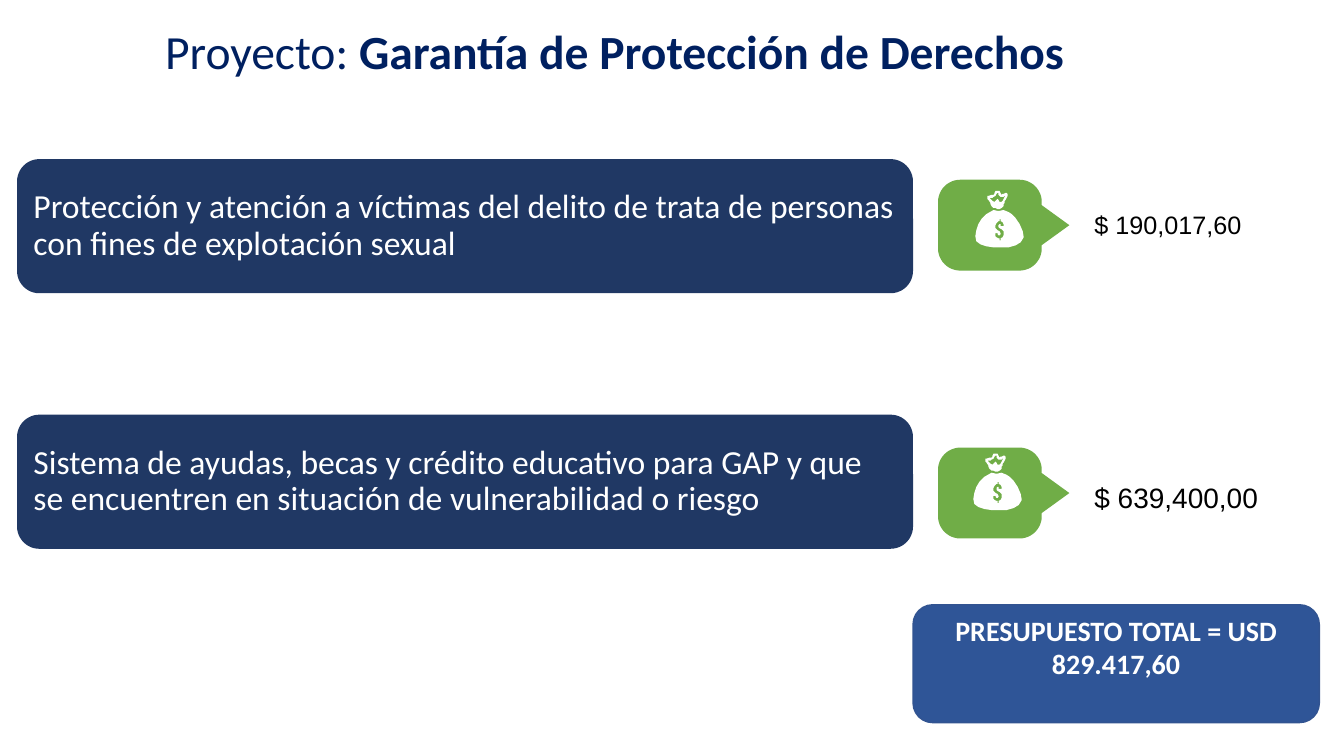
import math

from pptx import Presentation
from pptx.dml.color import RGBColor
from pptx.enum.shapes import MSO_SHAPE
from pptx.enum.text import MSO_ANCHOR, MSO_AUTO_SIZE, PP_ALIGN
from pptx.util import Cm, Pt

ROUNDED = MSO_SHAPE.ROUNDED_RECTANGLE
TOP, MIDDLE = MSO_ANCHOR.TOP, MSO_ANCHOR.MIDDLE
LEFT, CENTER = PP_ALIGN.LEFT, PP_ALIGN.CENTER
COLORS = {
    "title": "002060", "panel": "203864", "callout": "70AD47",
    "total": "2F5597", "total_line": "325491", "white": "FFFFFF", "black": "000000",
}

# Money bag outlines on a grid 48 units wide
BAG_WIDTH = 48
DOLLAR = [
    (24, 28), (24, 30), (23, 30), (22, 31), (21, 32), (20, 34), (20, 37), (21, 38),
    (22, 39), (24, 40), (25, 42), (25, 43), (24, 44), (23, 44), (22, 43), (22, 42),
    (20, 42), (20, 45), (21, 46), (23, 47), (24, 47), (24, 49), (25, 49), (25, 47),
    (27, 46), (28, 44), (28, 40), (27, 39), (26, 38), (24, 37), (23, 36), (23, 34),
    (24, 33), (25, 33), (25, 35), (28, 35), (28, 33), (27, 31), (25, 30), (25, 28),
]
SACK = [
    (28, 19), (33, 21), (36, 23), (40, 27), (44, 33), (47, 40), (48, 46), (45, 51),
    (40, 54), (33, 56), (25, 56), (18, 56), (11, 55), (5, 53), (1, 50), (0, 45),
    (1, 39), (3, 33), (6, 28), (11, 23), (18, 19), (23, 20),
]
KNOT_HOLE = [
    (22, 2), (21, 3), (20, 5), (18, 6), (17, 7), (14, 7), (15, 8), (16, 9), (17, 10),
    (19, 11), (20, 10), (21, 9), (22, 8), (23, 9), (24, 11), (26, 11), (27, 10),
    (28, 8), (29, 6), (30, 5), (29, 5), (28, 6), (25, 6), (24, 5), (23, 4), (23, 2),
]
KNOT = [
    (22, 0), (24, 0), (25, 2), (26, 4), (27, 3), (28, 3), (30, 2), (31, 2), (32, 3),
    (32, 5), (31, 7), (30, 9), (29, 10), (29, 12), (28, 13), (28, 15), (27, 16),
    (26, 17), (24, 18), (22, 18), (20, 17), (18, 17), (17, 16), (16, 15), (15, 13),
    (15, 12), (13, 9), (12, 8), (12, 5), (13, 5), (16, 4), (18, 4), (19, 3), (19, 2),
    (20, 0),
]


def rgb(name):
    return RGBColor.from_string(COLORS[name])


def paint(shape, fill, line=None):
    shape.shadow.inherit = False
    shape.fill.solid()
    shape.fill.fore_color.rgb = rgb(fill)
    if line:
        shape.line.color.rgb = rgb(line)
        shape.line.width = Pt(1)
    else:
        shape.line.fill.background()


def format_runs(paragraph, font_name, size, color, bold=False):
    for run in paragraph.runs:
        run.font.name = font_name
        run.font.size = Pt(size)
        run.font.bold = bold
        run.font.color.rgb = rgb(color)


def add_outline(slide, contours, left, top, scale, fill):
    """Draw closed contours, given in local units, as one shape."""
    builder = slide.shapes.build_freeform(*contours[0][0], scale=scale)
    builder.add_line_segments(contours[0][1:], close=True)
    for contour in contours[1:]:
        builder.move_to(*contour[0])
        builder.add_line_segments(contour[1:], close=True)
    paint(builder.convert_to_shape(left, top), fill)


def add_title(slide, left, top, width, height):
    title = slide.shapes.title
    title.left, title.top, title.width, title.height = left, top, width, height
    frame = title.text_frame
    frame.auto_size = MSO_AUTO_SIZE.NONE
    frame.vertical_anchor = TOP
    frame.text = "Proyecto: "
    paragraph = frame.paragraphs[0]
    paragraph.add_run().text = "Garantía de Protección de Derechos"
    paragraph.alignment = LEFT
    paragraph.line_spacing = 0.8
    format_runs(paragraph, "Calibri", 34, "title")
    paragraph.runs[1].font.bold = True


def add_panel(slide, text, left, top, width, height):
    panel = slide.shapes.add_shape(ROUNDED, left, top, width, height)
    paint(panel, "panel")
    frame = panel.text_frame
    frame.word_wrap = True
    frame.vertical_anchor = MIDDLE
    frame.margin_left = frame.margin_right = Cm(0.25)
    frame.text = text
    paragraph = frame.paragraphs[0]
    paragraph.alignment = LEFT
    paragraph.line_spacing = 0.9
    format_runs(paragraph, "Calibri", 24, "white")


def add_callout(slide, left, top, width, height):
    """Rounded box whose pointer fills the right fifth of its width."""
    body, radius, pointer = width * 0.79, height * 0.245, height * 0.22
    contour = []
    corners = [(radius, radius), (body - radius, radius),
               (body - radius, height - radius), (radius, height - radius)]
    for index, (center_x, center_y) in enumerate(corners):
        for step in range(13):
            angle = math.radians(180 + 90 * index + 7.5 * step)
            contour.append((center_x + radius * math.cos(angle),
                            center_y + radius * math.sin(angle)))
        if index == 1:
            contour += [(body, height / 2 - pointer), (width, height / 2),
                        (body, height / 2 + pointer)]
    add_outline(slide, [contour], left, top, 1, "callout")


def add_amount(slide, text, size, left, top, width, height):
    box = slide.shapes.add_textbox(left, top, width, height)
    box.text_frame.word_wrap = True
    box.text_frame.text = text
    format_runs(box.text_frame.paragraphs[0], "Arial", size, "black")


def add_budget_row(slide, row, left, top):
    """Panel, callout with money bag, and amount."""
    add_panel(slide, row["text"], left, top, Cm(22.58), Cm(3.38))
    callout_left, callout_top = left + Cm(23.21), top + Cm(row["callout_drop"])
    add_callout(slide, callout_left, callout_top, Cm(3.31), Cm(2.29))
    bag_x, bag_y = row["bag"]
    add_outline(slide, [DOLLAR, SACK, KNOT_HOLE, KNOT], callout_left + Cm(bag_x),
                callout_top + Cm(bag_y), Cm(1.22) / BAG_WIDTH, "white")
    add_amount(slide, row["amount"], row["size"], left + Cm(26.9),
               callout_top + Cm(row["amount_drop"]), Cm(5.36), Cm(1.02))


def add_total(slide, left, top, width, height):
    total = slide.shapes.add_shape(ROUNDED, left, top, width, height)
    paint(total, "total", "total_line")
    frame = total.text_frame
    frame.word_wrap = True
    frame.vertical_anchor = MIDDLE
    frame.margin_bottom = Cm(0.98)
    frame.text = "PRESUPUESTO TOTAL = USD 829.417,60"
    paragraph = frame.paragraphs[0]
    paragraph.alignment = CENTER
    format_runs(paragraph, "Calibri", 20, "white", bold=True)


ROWS = [
    {"text": "Protección y atención a víctimas del delito de trata de personas "
             "con fines de explotación sexual",
     "amount": "$ 190,017,60", "size": 18, "top": 4.01,
     "callout_drop": 0.52, "bag": (0.94, 0.28), "amount_drop": 0.61},
    {"text": "Sistema de ayudas, becas y crédito educativo para GAP y que "
             "se encuentren en situación de vulnerabilidad o riesgo",
     "amount": "$ 639,400,00", "size": 20, "top": 10.45,
     "callout_drop": 0.83, "bag": (0.89, 0.15), "amount_drop": 0.71},
]


def main():
    presentation = Presentation()
    presentation.slide_width, presentation.slide_height = Cm(33.87), Cm(19.05)
    slide = presentation.slides.add_slide(presentation.slide_layouts[5])
    add_title(slide, Cm(3.91), Cm(0.71), Cm(23.6), Cm(2.06))
    for row in ROWS:
        add_budget_row(slide, row, Cm(0.43), Cm(row["top"]))
    add_total(slide, Cm(23.01), Cm(15.24), Cm(10.24), Cm(2.97))
    presentation.save("out.pptx")


if __name__ == "__main__":
    main()
